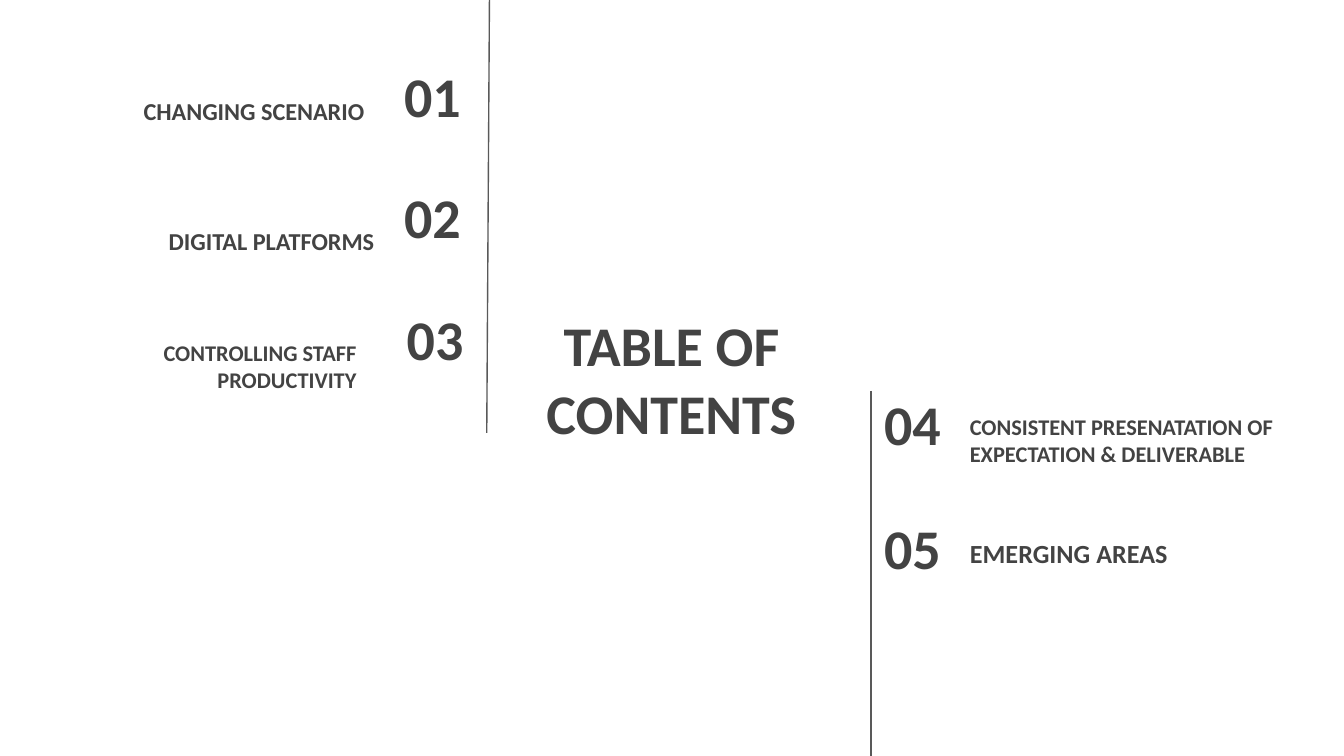
from lxml import etree
from pptx import Presentation, util as u
from pptx.dml.color import RGBColor
from pptx.enum import shapes, text
from pptx.oxml.ns import qn

LEFT, CENTER, RIGHT = text.PP_ALIGN.LEFT, text.PP_ALIGN.CENTER, text.PP_ALIGN.RIGHT
MIDDLE, BOTTOM = text.MSO_ANCHOR.MIDDLE, text.MSO_ANCHOR.BOTTOM
ROW_H = 1.6


def color(value):
    return RGBColor.from_string(value)


def add_label(words, x, y, w, h, size, align, anchor):
    tf = s.shapes.add_textbox(u.Cm(x), u.Cm(y), u.Cm(w), u.Cm(h)).text_frame
    tf.word_wrap = True
    tf.vertical_anchor = anchor
    tf.margin_left = tf.margin_right = tf.margin_top = tf.margin_bottom = u.Cm(0.25)
    tf.text = words
    p = tf.paragraphs[0]
    p.alignment = align
    font = p.runs[0].font
    font.name, font.size, font.bold = "Calibri", u.Pt(size), True
    font.color.rgb = color("434343")


prs = Presentation()
prs.slide_width, prs.slide_height = u.Cm(25.4), u.Cm(14.29)
s = prs.slides.add_slide(prs.slide_layouts[6])

# Title
add_label("TABLE OF CONTENTS", 9.4, 5.84, 6.58, 2.62, 30, CENTER, MIDDLE)

# Section numbers
for number, x, y, w, align in [
    ("01", 5.89, 0.99, 3.07, RIGHT),
    ("02", 5.89, 3.28, 3.07, RIGHT),
    ("03", 5.94, 5.59, 3.07, RIGHT),
    ("04", 16.46, 7.19, 2.97, LEFT),
    ("05", 16.46, 9.55, 2.97, LEFT),
]:
    add_label(number, x, y, w, ROW_H, 30, align, MIDDLE)

# Section names
for name, x, y, w, size, align in [
    ("CHANGING SCENARIO", 2.08, 1.02, 5.05, 13, RIGHT),
    ("DIGITAL PLATFORMS", 1.4, 3.48, 5.92, 13, RIGHT),
    ("CONTROLLING STAFF PRODUCTIVITY", 2.49, 6.07, 4.5, 12, RIGHT),
    ("CONSISTENT PRESENATATION OF EXPECTATION & DELIVERABLE", 18.08, 7.47, 7.47, 12, LEFT),
    ("EMERGING AREAS", 18.08, 9.4, 5.94, 14, LEFT),
]:
    add_label(name, x, y, w, ROW_H, size, align, BOTTOM)

# Vertical rules
for x1, y1, x2, y2 in [(9.25, 0, 9.2, 8.18), (16.46, 7.39, 16.46, 14.29)]:
    line = s.shapes.add_connector(
        shapes.MSO_CONNECTOR.STRAIGHT, u.Cm(x1), u.Cm(y1), u.Cm(x2), u.Cm(y2))
    line.line.color.rgb = color("595959")
    line.line.width = u.Pt(0.75)
    etree.SubElement(line._element.spPr, qn("a:effectLst"))

prs.save("out.pptx")
